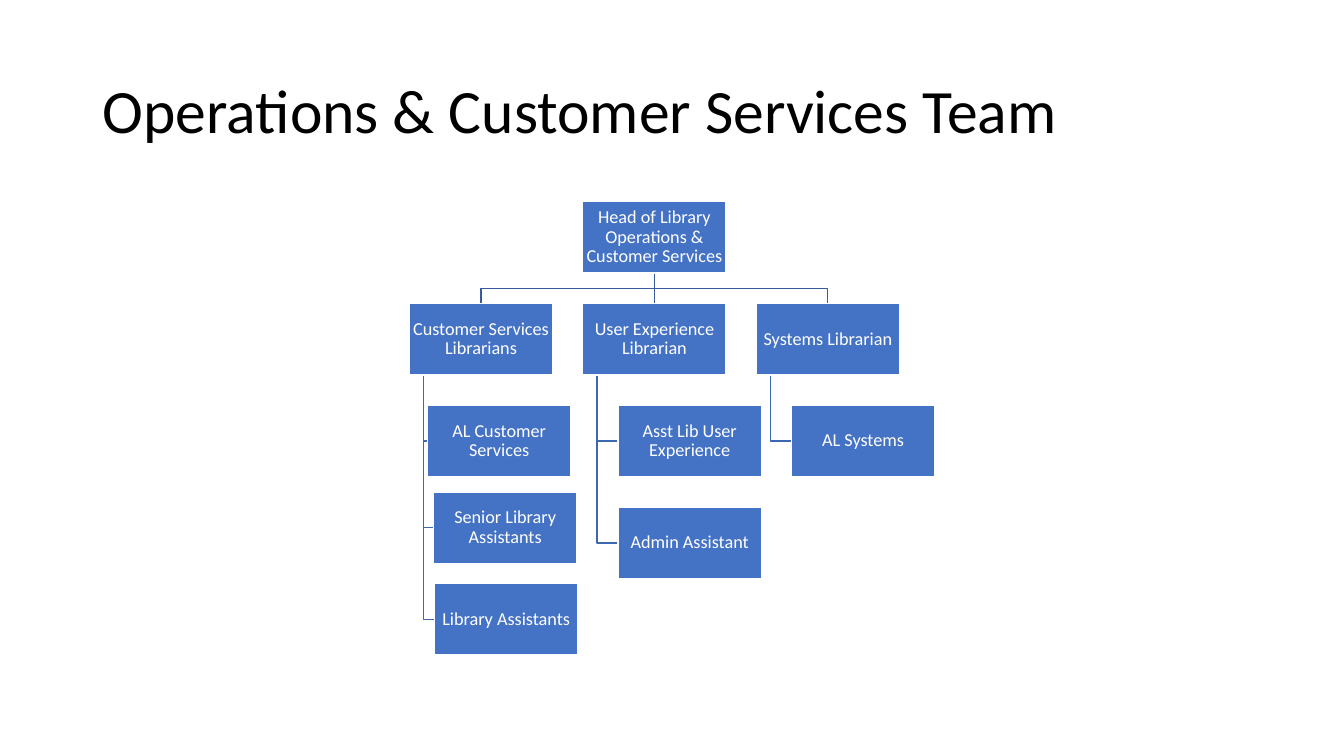
from lxml import etree
from pptx import Presentation
from pptx.dml.color import RGBColor
from pptx.enum.shapes import MSO_CONNECTOR, MSO_SHAPE
from pptx.enum.text import MSO_ANCHOR, MSO_AUTO_SIZE, PP_ALIGN
from pptx.oxml.ns import qn
from pptx.util import Inches, Pt

STRAIGHT = MSO_CONNECTOR.STRAIGHT
RECT = MSO_SHAPE.RECTANGLE
MIDDLE = MSO_ANCHOR.MIDDLE
NO_AUTOFIT = MSO_AUTO_SIZE.NONE
LEFT, CENTER = PP_ALIGN.LEFT, PP_ALIGN.CENTER

BOX_W, BOX_H = 1.42, 0.71
COL_LEFT, COL_STEP = 4.06, 1.72
ROW_TOP, ROW_STEP = 2.0, 1.01
STEM_INSET = 0.14
BOX_FILL, TOP_LINE, STEM_LINE = "4472C4", "365B9D", "3E67B2"

HEAD = "Head of Library Operations & Customer Services"
TEAMS = [
    ("Customer Services Librarians", [
        ("AL Customer Services", 4.24, 4.02),
        ("Senior Library Assistants", 4.3, 4.88),
        ("Library Assistants", 4.31, 5.79),
    ]),
    ("User Experience Librarian", [
        ("Asst Lib User Experience", 6.13, 4.02),
        ("Admin Assistant", 6.13, 5.03),
    ]),
    ("Systems Librarian", [("AL Systems", 7.85, 4.02)]),
]


def rgb(color):
    return RGBColor.from_string(color)


def write(tf, text, size=13, color="FFFFFF", align=CENTER, inset=0.01):
    tf.word_wrap = True
    tf.auto_size = NO_AUTOFIT
    tf.vertical_anchor = MIDDLE
    tf.margin_left = tf.margin_right = Inches(inset)
    tf.margin_top = tf.margin_bottom = Inches(min(inset, 0.05))
    p = tf.paragraphs[0]
    p.alignment = align
    p.line_spacing = 0.9
    r = p.add_run()
    r.text = text
    r.font.name = "Calibri"
    r.font.size = Pt(size)
    r.font.color.rgb = rgb(color)


def add_title(s, text):
    sp = s.shapes.title
    sp.left, sp.top = Inches(0.92), Inches(0.4)
    sp.width, sp.height = Inches(11.5), Inches(1.45)
    write(sp.text_frame, text, size=44, color="000000", align=LEFT, inset=0.1)


def add_box(s, text, left, top):
    sp = s.shapes.add_shape(RECT, Inches(left), Inches(top),
                            Inches(BOX_W), Inches(BOX_H))
    sp.shadow.inherit = False
    sp.fill.solid()
    sp.fill.fore_color.rgb = rgb(BOX_FILL)
    sp.line.color.rgb = rgb("FFFFFF")
    sp.line.width = Pt(1)
    write(sp.text_frame, text)


def add_link(s, points, color):
    points = [(Inches(x), Inches(y)) for x, y in points]
    if len(points) == 2:
        sp = s.shapes.add_connector(STRAIGHT, *points[0], *points[1])
        etree.SubElement(sp._element.spPr, qn("a:effectLst"))
    else:
        outline = s.shapes.build_freeform(*points[0])
        outline.add_line_segments(points[1:], close=False)
        sp = outline.convert_to_shape()
        sp.shadow.inherit = False
        sp.fill.background()
    sp.line.color.rgb = rgb(color)
    sp.line.width = Pt(1)


def add_head(s):
    left = COL_LEFT + COL_STEP
    center, bottom = left + BOX_W / 2, ROW_TOP + BOX_H
    team_top = ROW_TOP + ROW_STEP
    bar = (bottom + team_top) / 2
    for i in range(len(TEAMS)):
        x = COL_LEFT + i * COL_STEP + BOX_W / 2
        bend = [] if i == 1 else [(center, bar), (x, bar)]
        add_link(s, [(center, bottom), *bend, (x, team_top)], TOP_LINE)
    add_box(s, HEAD, left, ROW_TOP)


def add_team(s, column, lead, members):
    left, top = COL_LEFT + column * COL_STEP, ROW_TOP + ROW_STEP
    stem = left + STEM_INSET
    for _, x, y in members:
        middle = y + BOX_H / 2
        add_link(s, [(stem, top + BOX_H), (stem, middle), (x, middle)], STEM_LINE)
    add_box(s, lead, left, top)
    for member in members:
        add_box(s, *member)


def main():
    prs = Presentation()
    prs.slide_width, prs.slide_height = Inches(13.33), Inches(7.5)
    s = prs.slides.add_slide(prs.slide_layouts[5])
    add_title(s, "Operations & Customer Services Team")
    add_head(s)
    for column, (lead, members) in enumerate(TEAMS):
        add_team(s, column, lead, members)
    prs.save("out.pptx")


if __name__ == "__main__":
    main()
